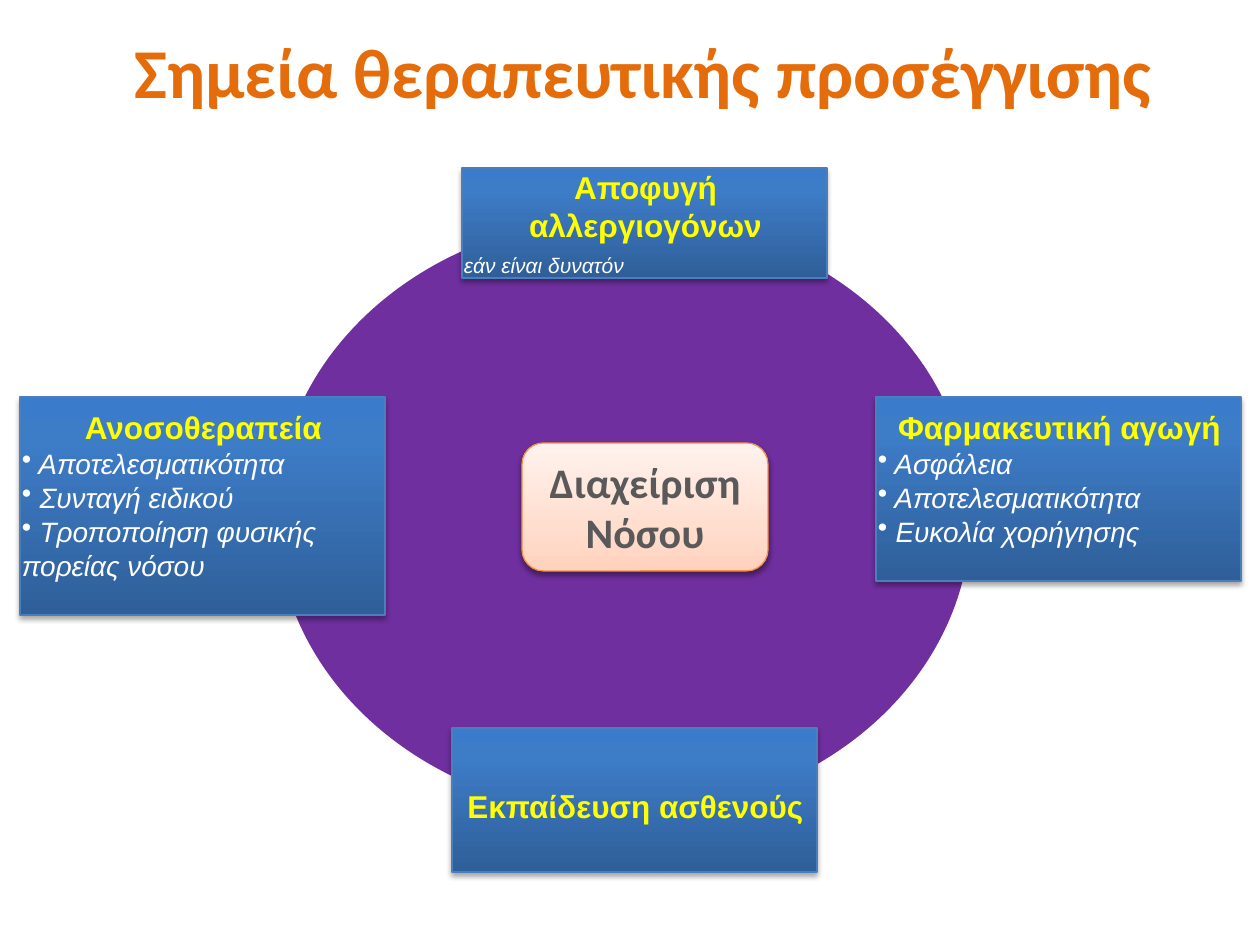
from lxml import etree
from pptx import Presentation
from pptx import util as u
from pptx.dml.color import RGBColor
from pptx.enum import shapes, text
from pptx.oxml import ns

PX = 914400 / 126
ORANGE = RGBColor(0xE4, 0x6C, 0x0A)
PURPLE = RGBColor(0x6F, 0x2F, 0x9F)
YELLOW = RGBColor(0xFF, 0xFF, 0x00)
WHITE = RGBColor(0xFF, 0xFF, 0xFF)
GREY = RGBColor(0x59, 0x59, 0x59)
BLUE_LINE = RGBColor(0x4B, 0x7E, 0xBC)
PEACH_LINE = RGBColor(0xF6, 0x92, 0x40)
BLUE_STOPS = [
    (0, RGBColor(0x2F, 0x5F, 0x99)),
    (80, RGBColor(0x3D, 0x7C, 0xC7)),
    (100, RGBColor(0x3A, 0x7C, 0xCB)),
]
PEACH_STOPS = [
    (0, RGBColor(0xFF, 0xD2, 0xBD)),
    (35, RGBColor(0xFF, 0xDE, 0xD0)),
    (100, RGBColor(0xFF, 0xF2, 0xED)),
]

presentation = Presentation()
presentation.slide_width = u.Inches(10)
presentation.slide_height = u.Inches(7.5)
slide = presentation.slides.add_slide(presentation.slide_layouts[6])


def add_panel(kind, box, stops, line_color, opacity):
    shape = slide.shapes.add_shape(kind, *[round(n * PX) for n in box])
    shape.fill.gradient()
    shape.fill.gradient_angle = 90
    properties = shape._element.spPr
    stop_list = properties.find(".//" + ns.qn("a:gsLst"))
    for stop in list(stop_list):
        stop_list.remove(stop)
    for position, color in stops:
        stop = etree.SubElement(stop_list, ns.qn("a:gs"), pos=str(position * 1000))
        etree.SubElement(stop, ns.qn("a:srgbClr"), val=str(color))
    shape.line.color.rgb = line_color
    shape.line.width = u.Pt(0.75)
    shape.shadow.inherit = False
    shadow = etree.SubElement(
        properties.find(ns.qn("a:effectLst")), ns.qn("a:outerShdw"),
        blurRad=str(u.Pt(3.1)), dist=str(u.Pt(1.8)), dir="5400000", rotWithShape="0")
    color = etree.SubElement(shadow, ns.qn("a:srgbClr"), val="000000")
    etree.SubElement(color, ns.qn("a:alpha"), val=str(opacity * 1000))
    shape.text_frame.word_wrap = True
    shape.text_frame.vertical_anchor = text.MSO_ANCHOR.MIDDLE
    return shape


def add_run(paragraph, words, size, color, name, bold=False, italic=False):
    run = paragraph.add_run()
    run.text = words
    run.font.size = u.Pt(size)
    run.font.color.rgb = color
    run.font.name = name
    run.font.bold = bold
    run.font.italic = italic


circle = slide.shapes.add_shape(
    shapes.MSO_SHAPE.OVAL, *[round(n * PX) for n in (276, 217, 695, 598)])
circle.fill.solid()
circle.fill.fore_color.rgb = PURPLE
circle.line.fill.background()
circle.shadow.inherit = False

title = slide.shapes.add_textbox(*[round(n * PX) for n in (64, 8, 1134, 105)])
frame = title.text_frame
frame.word_wrap = True
frame.vertical_anchor = text.MSO_ANCHOR.MIDDLE
frame.margin_left = round(24 * PX)
frame.margin_top = round(19 * PX)
frame.margin_right = frame.margin_bottom = 0
paragraph = frame.paragraphs[0]
paragraph.alignment = text.PP_ALIGN.CENTER
add_run(paragraph, "Σημεία θεραπευτικής προσέγγισης", 40, ORANGE, "Calibri", bold=True)

center = add_panel(shapes.MSO_SHAPE.ROUNDED_RECTANGLE, (522, 443, 246, 128),
                   PEACH_STOPS, PEACH_LINE, 38)
paragraph = center.text_frame.paragraphs[0]
paragraph.alignment = text.PP_ALIGN.CENTER
add_run(paragraph, "Διαχείριση Νόσου", 24, GREY, "Calibri", bold=True)

PANEL_WIDTH = 365
panels = [
    (876, 397, 184, 34, "Φαρμακευτική αγωγή", 28.4, 16, "•",
     [" Ασφάλεια", " Αποτελεσματικότητα", " Ευκολία χορήγησης"]),
    (20, 397, 218, 34, "Ανοσοθεραπεία", 28.4, 16, "•",
     [" Αποτελεσματικότητα", " Συνταγή ειδικού", " Τροποποίηση φυσικής πορείας νόσου"]),
    (452, 728, 144, 0, "Εκπαίδευση ασθενούς", 28.4, 16, "", []),
    (462, 168, 110, 0, "Αποφυγή αλλεργιογόνων", None, 12, "", ["εάν είναι δυνατόν"]),
]
for left, top, height, bottom, heading, spacing, size, bullet, items in panels:
    panel = add_panel(shapes.MSO_SHAPE.RECTANGLE, (left, top, PANEL_WIDTH, height),
                      BLUE_STOPS, BLUE_LINE, 35)
    frame = panel.text_frame
    frame.margin_left = round(2 * PX)
    frame.margin_top = frame.margin_right = 0
    frame.margin_bottom = round(bottom * PX)
    paragraph = frame.paragraphs[0]
    paragraph.alignment = text.PP_ALIGN.CENTER
    if spacing:
        paragraph.line_spacing = u.Pt(spacing)
    add_run(paragraph, heading, 18, YELLOW, "Arial", bold=True)
    for item in items:
        paragraph = frame.add_paragraph()
        paragraph.alignment = text.PP_ALIGN.LEFT
        paragraph.line_spacing = u.Pt(19.4)
        if bullet:
            etree.SubElement(paragraph._p.get_or_add_pPr(), ns.qn("a:buChar"), char=bullet)
        add_run(paragraph, item, size, WHITE, "Arial", italic=True)

presentation.save("out.pptx")
